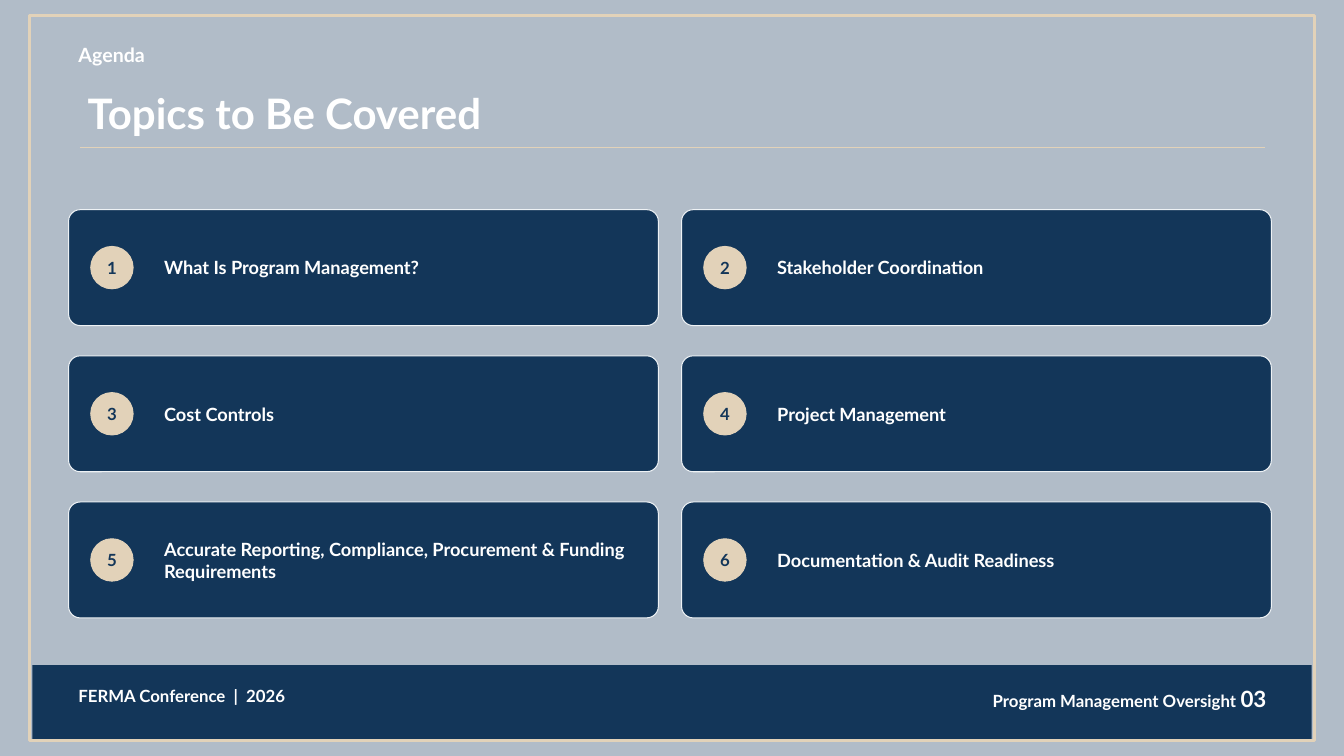
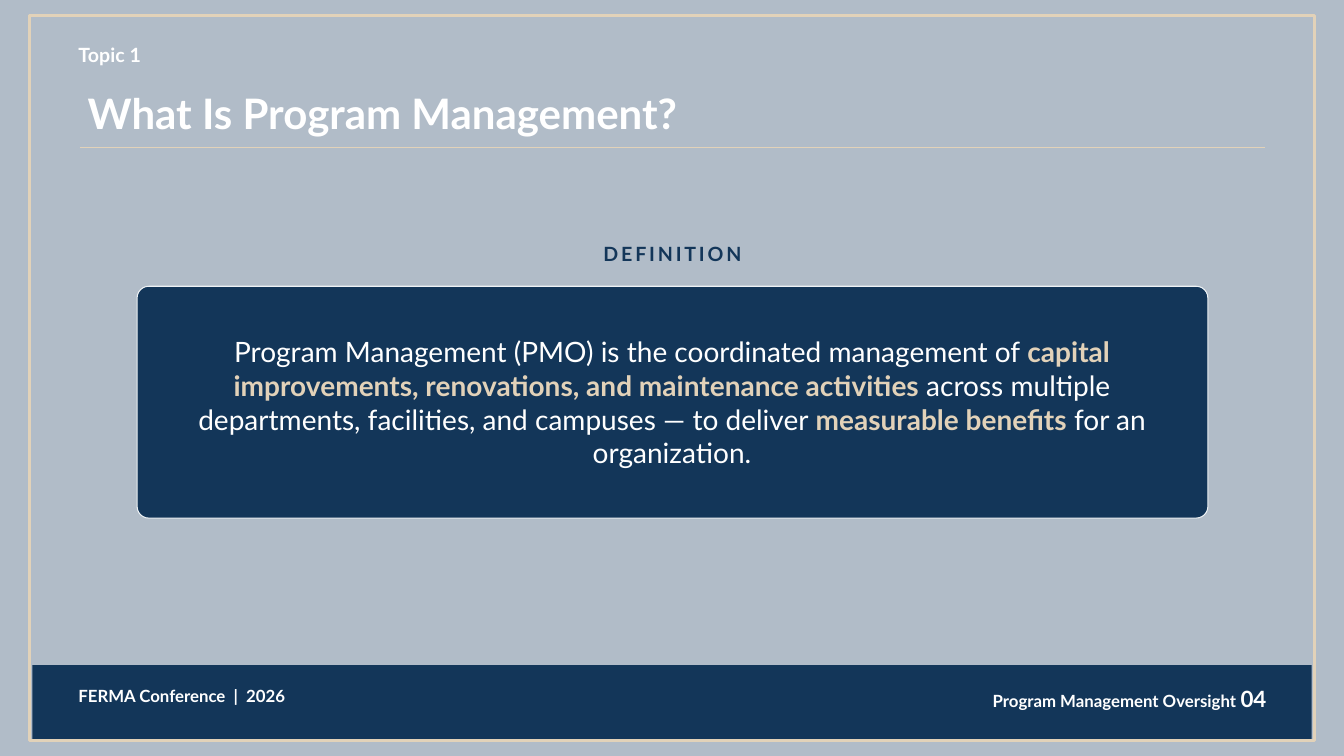
"""Build the agenda and definition slides of a program management deck."""
import lxml.etree
import pptx
import pptx.dml.color
import pptx.enum.shapes
import pptx.enum.text
import pptx.oxml.ns
import pptx.util

Inches = pptx.util.Inches
Pt = pptx.util.Pt
RGBColor = pptx.dml.color.RGBColor
Shape = pptx.enum.shapes.MSO_SHAPE
Align = pptx.enum.text.PP_ALIGN
Anchor = pptx.enum.text.MSO_ANCHOR

NAVY = RGBColor(0x13, 0x36, 0x59)
SAND = RGBColor(0xE2, 0xD2, 0xB9)
MIST = RGBColor(0xB1, 0xBC, 0xC8)
PALE = RGBColor(0xEE, 0xF2, 0xF5)
WHITE = RGBColor(0xFF, 0xFF, 0xFF)
FONT = "Lato"

TOPICS = [
    "What Is Program Management?",
    "Stakeholder Coordination",
    "Cost Controls",
    "Project Management",
    "Accurate Reporting, Compliance, Procurement & Funding Requirements",
    "Documentation & Audit Readiness",
]
DEFINITION = [
    ("Program Management (PMO) is the coordinated management of ", {}),
    ("capital improvements, renovations, and maintenance activities",
     {"color": SAND, "bold": True}),
    (" across multiple departments, facilities, and campuses — to deliver ", {}),
    ("measurable benefits", {"color": SAND, "bold": True}),
    (" for an organization.", {}),
]


def write(frame, text, align=Align.LEFT, anchor=Anchor.TOP, **style):
    """Fill a frame with a string or with (text, style changes) pairs."""
    frame.word_wrap = True
    frame.auto_size = pptx.enum.text.MSO_AUTO_SIZE.NONE
    frame.vertical_anchor = anchor
    para = frame.paragraphs[0]
    para.alignment = align
    for words, changes in [(text, {})] if isinstance(text, str) else text:
        look = {"size": 12, "color": WHITE, "bold": True, "spacing": 0, **style, **changes}
        span = para.add_run()
        span.text = words
        span.font.name = FONT
        span.font.size = Pt(look["size"])
        span.font.bold = look["bold"]
        span.font.color.rgb = look["color"]
        if look["spacing"]:
            span._r.get_or_add_rPr().set("spc", str(look["spacing"] * 100))


class Deck:
    """Hold the presentation, its shared style and the current page."""

    def __init__(self):
        """Start an empty widescreen presentation."""
        self.show = pptx.Presentation()
        self.show.slide_width = Inches(13.33)
        self.show.slide_height = Inches(7.5)
        self.page = None

    def add_page(self, number, label, title):
        """Add a page with its footer band, frame, label, title and rule."""
        self.page = self.show.slides.add_slide(self.show.slide_layouts[5])
        background = self.page.background.fill
        background.solid()
        background.fore_color.rgb = MIST
        self.shape(Shape.RECTANGLE, 0.32, 6.6, 12.69, 0.73, fill=NAVY)
        self.text("FERMA Conference  |  2026", 0.68, 6.75, 3.9, 0.4)
        self.text([("Program Management Oversight ", {}), (f"{number:02d}", {"size": 16})],
                  8.46, 6.75, 4.2, 0.4, align=Align.RIGHT)
        self.shape(Shape.RECTANGLE, 0.29, 0.15, 12.75, 7.2, line=SAND, weight=2.25)
        self.text(label, 0.68, 0.38, 10.39, 0.33, size=14)
        self.title(title)
        self.rule(0.79, 1.46, 11.76)

    def title(self, text):
        """Place and format the title placeholder."""
        box = self.page.shapes.title
        box.left, box.top = Inches(0.77), Inches(0.82)
        box.width, box.height = Inches(10.88), Inches(0.61)
        write(box.text_frame, text, size=30)

    def text(self, text, left, top, width, height, **style):
        """Add a text box."""
        box = self.page.shapes.add_textbox(
            Inches(left), Inches(top), Inches(width), Inches(height))
        write(box.text_frame, text, **style)

    def shape(self, kind, left, top, width, height, fill=None, line=None, weight=0.75):
        """Add a flat shape and return it."""
        shape = self.page.shapes.add_shape(
            kind, Inches(left), Inches(top), Inches(width), Inches(height))
        shape.shadow.inherit = False
        for paint, color in ((shape.fill, fill), (shape.line.fill, line)):
            if color is None:
                paint.background()
            else:
                paint.solid()
                paint.fore_color.rgb = color
        if line is not None:
            shape.line.width = Pt(weight)
        return shape

    def rule(self, left, top, width):
        """Add a thin horizontal line."""
        line = self.page.shapes.add_connector(
            pptx.enum.shapes.MSO_CONNECTOR.STRAIGHT,
            Inches(left), Inches(top), Inches(left + width), Inches(top))
        line.line.color.rgb = SAND
        line.line.width = Pt(0.75)
        lxml.etree.SubElement(line._element.spPr, pptx.oxml.ns.qn("a:effectLst"))

    def panel(self, left, top, width, height, rounding):
        """Add a rounded navy panel."""
        panel = self.shape(Shape.ROUNDED_RECTANGLE, left, top, width, height,
                           fill=NAVY, line=PALE)
        panel.adjustments[0] = rounding

    def badge(self, text, left, top, size):
        """Add a round badge with centred text."""
        badge = self.shape(Shape.OVAL, left, top, size, size, fill=SAND, line=SAND)
        frame = badge.text_frame
        frame.margin_left = frame.margin_right = frame.margin_top = frame.margin_bottom = 0
        write(frame, text, align=Align.CENTER, anchor=Anchor.MIDDLE, color=NAVY)

    def topic_card(self, number, topic, left, top, width, height):
        """Add a panel with a numbered badge and a topic."""
        badge_size = 0.42
        self.panel(left, top, width, height, 0.1)
        self.badge(str(number), left + 0.22, top + (height - badge_size) / 2, badge_size)
        self.text(topic, left + 0.85, top + 0.11, width - 1.07, height - 0.22,
                  anchor=Anchor.MIDDLE, size=13)


def add_agenda(deck):
    """Lay out the topics as a grid of two columns."""
    deck.add_page(3, "Agenda", "Topics to Be Covered")
    width, height, column_gap, row_gap = 5.85, 1.15, 0.23, 0.3
    for index, topic in enumerate(TOPICS):
        row, column = divmod(index, 2)
        deck.topic_card(index + 1, topic, 0.68 + column * (width + column_gap),
                        2.08 + row * (height + row_gap), width, height)


def add_definition(deck):
    """Show the definition in one large panel."""
    deck.add_page(4, "Topic 1", TOPICS[0])
    deck.text("DEFINITION", 1.36, 2.35, 10.62, 0.35,
              align=Align.CENTER, size=14, color=NAVY, spacing=2)
    deck.panel(1.36, 2.84, 10.62, 2.3, 0.05)
    deck.text(DEFINITION, 1.79, 3.06, 9.75, 1.86,
              align=Align.CENTER, anchor=Anchor.MIDDLE, size=20, bold=False)


def main():
    """Build and save the deck."""
    deck = Deck()
    add_agenda(deck)
    add_definition(deck)
    deck.show.save("out.pptx")


if __name__ == "__main__":
    main()
